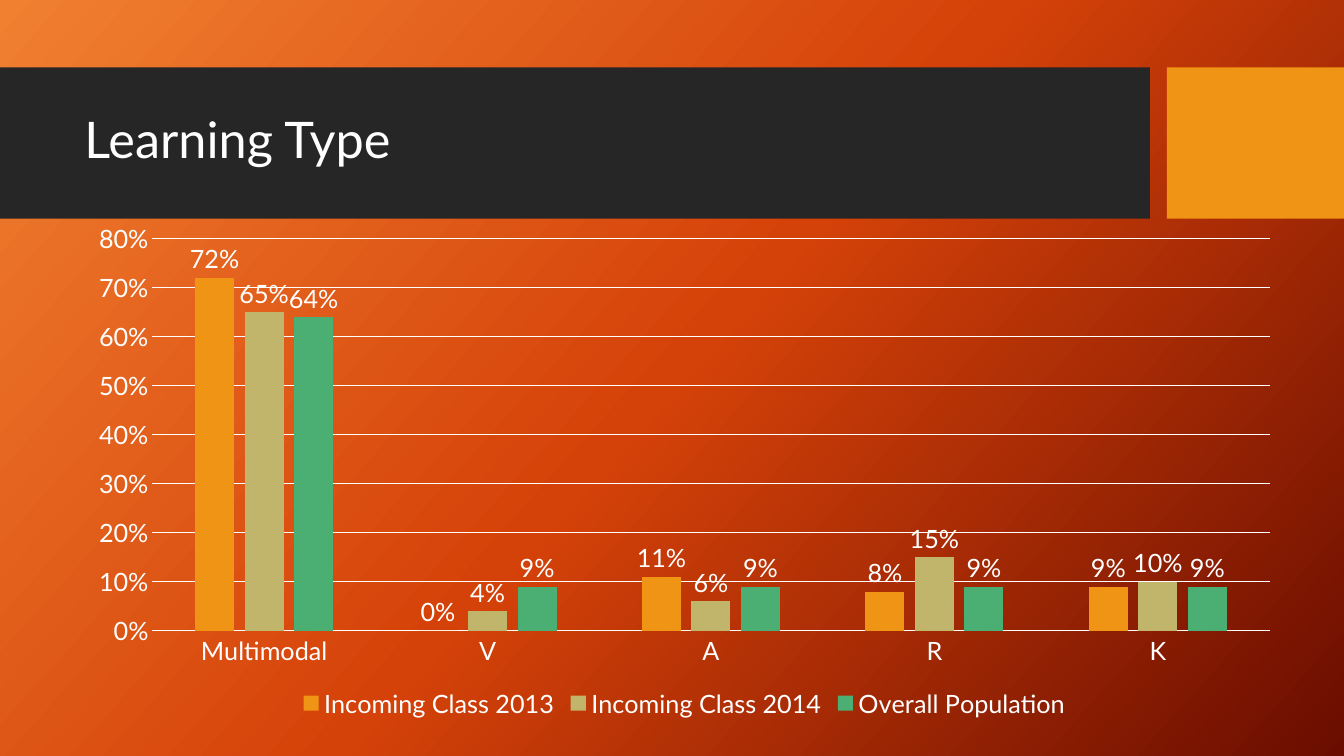
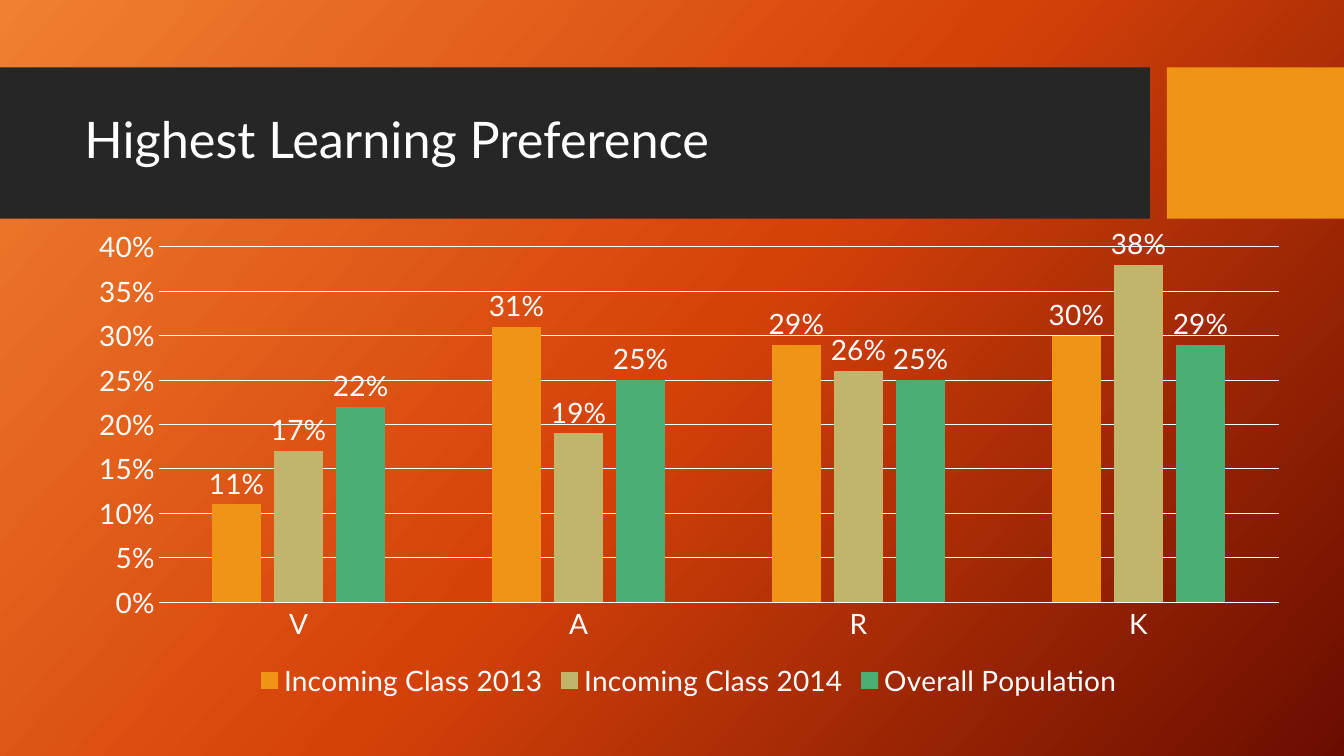
from dataclasses import dataclass

import pptx
import pptx.chart.data
import pptx.dml.color
import pptx.enum.chart
import pptx.enum.shapes
import pptx.enum.text
import pptx.oxml
import pptx.oxml.ns
import pptx.util
from lxml import etree

Cm = pptx.util.Cm
Pt = pptx.util.Pt
RGB = pptx.dml.color.RGBColor.from_string
qn = pptx.oxml.ns.qn


@dataclass(frozen=True)
class Theme:
    font: str = "Lato"
    text: str = "FFFFFF"
    band: str = "262626"
    accent: str = "F09415"
    series: tuple[str, ...] = ("F09415", "C1B56B", "4BAF73")
    gradient: tuple[str, ...] = ("F18031", "D54209", "6A0D00")
    gradient_angle: int = 42
    title_size: int = 36
    line_width: float = 0.75


@dataclass(frozen=True)
class Box:
    left: float
    top: float
    width: float
    height: float

    def lengths(self) -> tuple:
        return Cm(self.left), Cm(self.top), Cm(self.width), Cm(self.height)


@dataclass(frozen=True)
class ChartSlide:
    title: str
    box: Box
    size: int
    axis_max: float
    axis_step: float
    categories: tuple[str, ...]
    values: tuple[tuple[float, ...], ...]


THEME = Theme()
WIDTH, HEIGHT = 33.87, 19.05
BANDS = (
    (Box(0, 1.7, 28.98, 3.81), THEME.band),
    (Box(29.41, 1.7, 4.46, 3.81), THEME.accent),
)
TITLE_BOX = Box(1.88, 2.08, 26.7, 3)
SERIES_NAMES = ("Incoming Class 2013", "Incoming Class 2014", "Overall Population")
SLIDES = (
    ChartSlide(
        "Learning Type", Box(1.88, 5.38, 30.73, 12.85), 18, 0.8, 0.1,
        ("Multimodal", "V", "A", "R", "K"),
        ((0.72, 0, 0.11, 0.08, 0.09),
         (0.65, 0.04, 0.06, 0.15, 0.1),
         (0.64, 0.09, 0.09, 0.09, 0.09)),
    ),
    ChartSlide(
        "Highest Learning Preference", Box(1.88, 5.54, 30.96, 12.19), 20, 0.4, 0.05,
        ("V", "A", "R", "K"),
        ((0.11, 0.31, 0.29, 0.3),
         (0.17, 0.19, 0.26, 0.38),
         (0.22, 0.25, 0.25, 0.29)),
    ),
)


def set_font(font, size: int) -> None:
    font.name = THEME.font
    font.size = Pt(size)
    font.color.rgb = RGB(THEME.text)


def set_line(line) -> None:
    line.color.rgb = RGB(THEME.text)
    line.width = Pt(THEME.line_width)


# Shared gradient, set on the master
def set_background(master) -> None:
    fill = master.background.fill
    fill.gradient()
    fill.gradient_angle = 360 - THEME.gradient_angle
    stops = master.element.find(".//" + qn("p:bg") + "//" + qn("a:gsLst"))
    for stop in list(stops):
        stops.remove(stop)
    step = 100000 // (len(THEME.gradient) - 1)
    for i, color in enumerate(THEME.gradient):
        stop = etree.SubElement(stops, qn("a:gs"), pos=str(i * step))
        etree.SubElement(stop, qn("a:srgbClr"), val=color)


# Title band, accent block and title
def add_header(slide, title: str) -> None:
    for box, color in BANDS:
        sp = slide.shapes.add_shape(
            pptx.enum.shapes.MSO_SHAPE.RECTANGLE, *box.lengths())
        sp.shadow.inherit = False
        sp.fill.solid()
        sp.fill.fore_color.rgb = RGB(color)
        sp.line.fill.background()
    tf = slide.shapes.add_textbox(*TITLE_BOX.lengths()).text_frame
    tf.word_wrap = True
    tf.vertical_anchor = pptx.enum.text.MSO_ANCHOR.MIDDLE
    p = tf.paragraphs[0]
    p.text = title
    p.line_spacing = 0.9
    set_font(p.font, THEME.title_size)


def add_column_chart(slide, item: ChartSlide) -> None:
    data = pptx.chart.data.CategoryChartData(number_format="0%")
    data.categories = item.categories
    for name, values in zip(SERIES_NAMES, item.values):
        data.add_series(name, values)
    chart = slide.shapes.add_chart(
        pptx.enum.chart.XL_CHART_TYPE.COLUMN_CLUSTERED,
        *item.box.lengths(), data).chart
    chart.has_title = False
    set_font(chart.font, item.size)

    # Legend
    chart.has_legend = True
    chart.legend.position = pptx.enum.chart.XL_LEGEND_POSITION.BOTTOM
    chart.legend.include_in_layout = False
    set_font(chart.legend.font, item.size)

    # Axes
    for axis in (chart.category_axis, chart.value_axis):
        axis.major_tick_mark = pptx.enum.chart.XL_TICK_MARK.NONE
        axis.minor_tick_mark = pptx.enum.chart.XL_TICK_MARK.NONE
        set_font(axis.tick_labels.font, item.size)
    set_line(chart.category_axis.format.line)
    axis = chart.value_axis
    axis.minimum_scale, axis.maximum_scale = 0, item.axis_max
    axis.major_unit = item.axis_step
    axis.format.line.fill.background()
    axis.has_major_gridlines = True
    set_line(axis.major_gridlines.format.line)
    axis.tick_labels.number_format = "0%"
    axis.tick_labels.number_format_is_linked = False

    # Columns and their labels
    plot = chart.plots[0]
    plot.gap_width, plot.overlap = 219, -27
    plot.vary_by_categories = False
    for series, color in zip(plot.series, THEME.series):
        series.format.fill.solid()
        series.format.fill.fore_color.rgb = RGB(color)
        labels = series.data_labels
        labels.show_value = True
        labels.number_format = "0%"
        labels.number_format_is_linked = False
        labels.position = pptx.enum.chart.XL_LABEL_POSITION.OUTSIDE_END
        set_font(labels.font, item.size)


def main() -> None:
    prs = pptx.Presentation()
    prs.slide_width, prs.slide_height = Cm(WIDTH), Cm(HEIGHT)
    set_background(prs.slide_master)
    for item in SLIDES:
        slide = prs.slides.add_slide(prs.slide_layouts[6])
        add_header(slide, item.title)
        add_column_chart(slide, item)
    prs.save("out.pptx")


if __name__ == "__main__":
    main()
